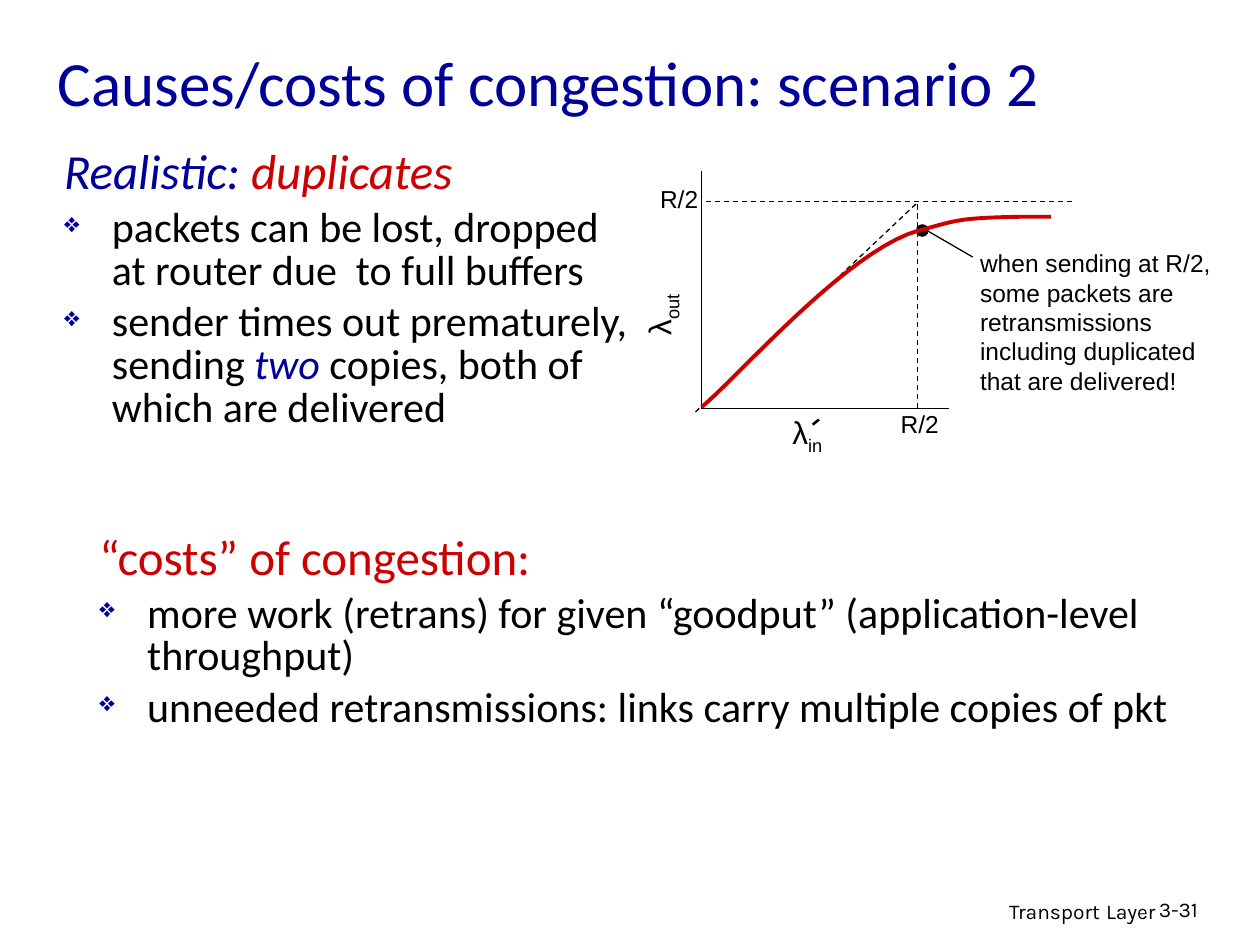
from lxml.etree import SubElement
from pptx import Presentation
from pptx.dml.color import RGBColor
from pptx.enum.dml import MSO_LINE
from pptx.enum.shapes import MSO_CONNECTOR, MSO_SHAPE
from pptx.enum.text import MSO_ANCHOR, PP_ALIGN
from pptx.oxml.ns import qn
from pptx.util import Inches, Pt

INK = {"black": "000000", "blue": "000099", "red": "CC0000"}


class Page:
    """Holds the style and the current slide."""

    def __init__(self, deck):
        self.slide = deck.slides.add_slide(deck.slide_layouts[6])
        self.shapes = self.slide.shapes

    def color(self, name):
        return RGBColor.from_string(INK[name])

    def run(self, para, text, size, font, ink="black", slant=False, base=0):
        run = para.add_run()
        run.text = text
        run.font.size = Pt(size)
        run.font.name = font
        run.font.italic = slant
        run.font.color.rgb = self.color(ink)
        if base:
            run.font._element.set("baseline", str(base * 1000))

    def box(self, x, y, w, h, wrap=True):
        box = self.shapes.add_textbox(Inches(x), Inches(y), Inches(w), Inches(h))
        box.text_frame.word_wrap = wrap
        return box

    def label(self, place, runs, font="Arial", wrap=True, align=PP_ALIGN.LEFT,
              anchor=MSO_ANCHOR.TOP, turn=0):
        box = self.box(*place, wrap)
        box.rotation = turn
        box.text_frame.vertical_anchor = anchor
        para = box.text_frame.paragraphs[0]
        para.alignment = align
        for run in runs:
            self.run(para, run[0], run[1], font, *run[2:])

    def bullet(self, props):
        tint = SubElement(props, qn("a:buClr"))
        SubElement(tint, qn("a:srgbClr"), val=INK["blue"])
        SubElement(props, qn("a:buSzPct"), val="65000")
        SubElement(props, qn("a:buChar"), char="❖")

    def list(self, place, head, items):
        frame = self.box(*place).text_frame
        for i, runs in enumerate([head] + items):
            para = frame.add_paragraph() if i else frame.paragraphs[0]
            size = 24 if i else 28
            para.line_spacing = 0.85
            para.space_before = Pt(size * 0.2)
            props = para._p.get_or_add_pPr()
            props.set("marL", str(Inches(0.38)))
            props.set("indent", str(-Inches(0.38)))
            if i:
                self.bullet(props)
            for text, *style in runs:
                self.run(para, text, size, "Calibri", *style)

    def line(self, start, end, width=0.75, dash=False, arrow=False):
        ends = [Inches(v) for v in (*start, *end)]
        line = self.shapes.add_connector(MSO_CONNECTOR.STRAIGHT, *ends)
        line.line.color.rgb = self.color("black")
        line.line.width = Pt(width)
        if dash:
            line.line.dash_style = MSO_LINE.DASH
        if arrow:
            SubElement(line.line._get_or_add_ln(), qn("a:tailEnd"), type="triangle")
        SubElement(line._element.spPr, qn("a:effectLst"))

    def dot(self, x, y, size):
        dot = self.shapes.add_shape(MSO_SHAPE.OVAL, Inches(x), Inches(y),
                                    Inches(size), Inches(size))
        dot.shadow.inherit = False
        dot.fill.solid()
        dot.fill.fore_color.rgb = self.color("black")
        dot.line.fill.background()

    def curve(self, start, parts, ink, width, steps=20):
        dots, last = [], start
        for part in parts:
            knots = (last, *part)
            for i in range(1, steps + 1):
                t = i / steps
                mix = ((1 - t) ** 3, 3 * t * (1 - t) ** 2, 3 * t * t * (1 - t), t ** 3)
                dots.append(tuple(Inches(sum(m * k[axis] for m, k in zip(mix, knots)))
                                  for axis in (0, 1)))
            last = part[-1]
        path = self.shapes.build_freeform(Inches(start[0]), Inches(start[1]))
        path.add_line_segments(dots, close=False)
        shape = path.convert_to_shape()
        shape.shadow.inherit = False
        shape.fill.background()
        shape.line.color.rgb = self.color(ink)
        shape.line.width = Pt(width)


def plot(page):
    page.line((5.57, 1.36), (5.57, 3.24))
    page.line((7.53, 3.24), (5.56, 3.24))
    page.line((8.51, 1.6), (5.56, 1.6), dash=True)
    page.line((5.52, 3.27), (7.29, 1.6), dash=True)
    page.line((7.28, 3.24), (7.28, 1.62), dash=True)
    page.dot(7.27, 1.78, 0.1)
    page.line((7.72, 2.04), (7.29, 1.79), arrow=True)
    page.curve((5.57, 3.23),
               [((5.85, 3), (6.72, 1.99), (7.29, 1.83)),
                ((7.6, 1.75), (7.58, 1.73), (8.11, 1.72)),
                ((8.34, 1.72), (8.29, 1.72), (8.34, 1.72))], "red", 2.25)
    for x, y in ((5.14, 1.41), (7.05, 3.2)):
        page.label((x, y, 0.5, 0.33), [("R/2", 14)], wrap=False)
    page.label((4.89, 2.22, 0.68, 0.4),
               [("λ", 18), ("out", 18, "black", False, -25)], turn=270)
    page.label((6.19, 3.23, 0.47, 0.4),
               [("λ", 18), ("in", 18, "black", False, -25)], wrap=False)
    page.line((6.45, 3.37), (6.5, 3.33), 1.5)
    page.label((7.68, 1.92, 2.06, 1.26),
               [("when sending at R/2, some packets are retransmissions "
                 "including duplicated that are delivered!", 14)])


def main():
    deck = Presentation()
    deck.slide_width, deck.slide_height = Inches(10), Inches(7.5)
    page = Page(deck)
    page.label((0.36, 0.17, 9.23, 0.95),
               [("Causes/costs of congestion: scenario 2", 36, "blue")],
               "Calibri", anchor=MSO_ANCHOR.MIDDLE)
    page.list((0.41, 1.14, 4.71, 2.1),
              [("Realistic: ", "blue", True), ("duplicates", "red", True)],
              [[("packets can be lost, dropped at router due  to full buffers",)],
               [("sender times out prematurely, sending ",), ("two ", "blue", True),
                ("copies, both of which are delivered",)]])
    plot(page)
    page.list((0.69, 4.2, 8.91, 1.08), [("“costs” of congestion:", "red")],
              [[("more work (retrans) for given “goodput” "
                 "(application-level throughput)",)],
               [("unneeded retransmissions: links carry multiple copies of pkt",)]])
    page.label((6.1, 7.05, 3.17, 0.31),
               [("Transport", 12), (" ", 14), ("Layer", 12)], "Karla",
               align=PP_ALIGN.RIGHT)
    page.label((9.1, 7.07, 0.74, 0.3), [("3-31", 12)], "Karla")
    deck.save("out.pptx")


if __name__ == "__main__":
    main()
